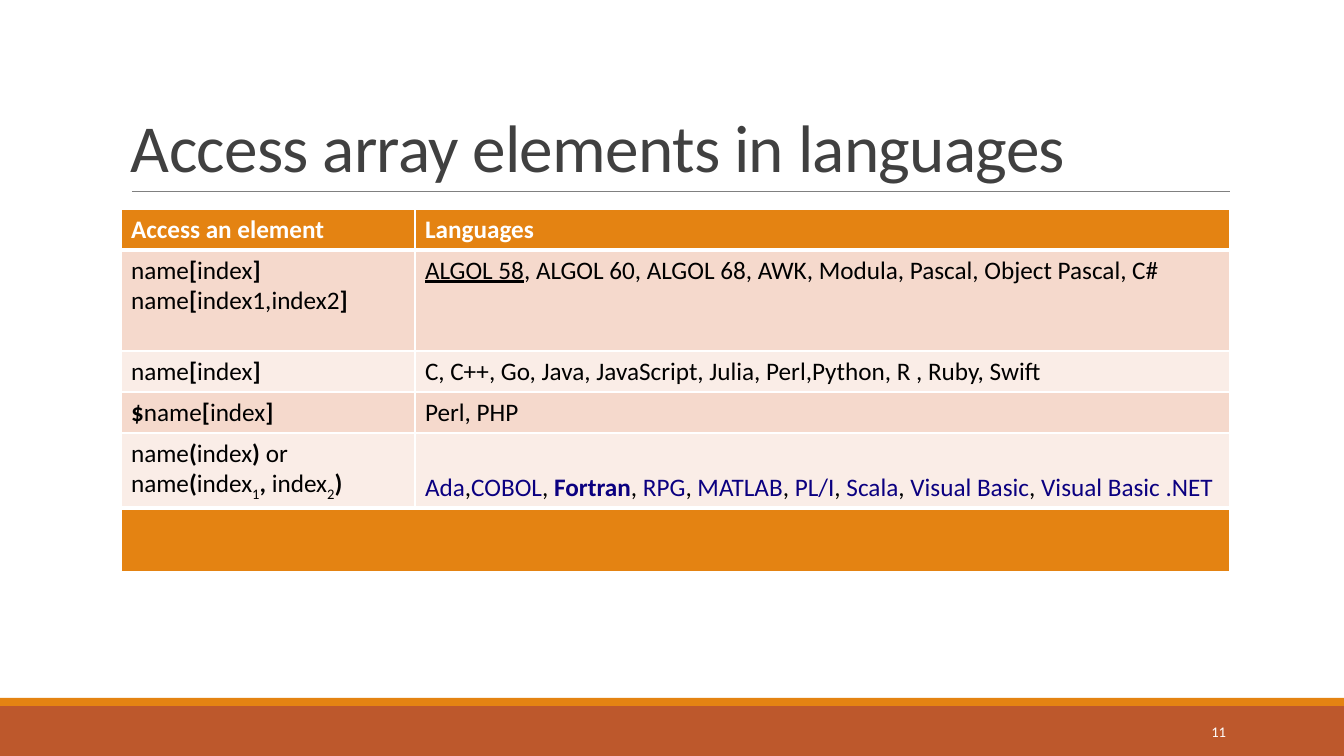
from lxml.etree import SubElement
from pptx import Presentation
from pptx.dml.color import RGBColor
from pptx.enum.shapes import MSO_CONNECTOR, MSO_SHAPE
from pptx.enum.text import MSO_ANCHOR, PP_ALIGN
from pptx.oxml import parse_xml
from pptx.oxml.ns import nsdecls, qn
from pptx.util import Pt

PX = 12192000 / 1344
FONT = "Calibri"
COLORS = {
    "orange": "E48312", "rust": "BD582C", "rule": "808080", "title": "404040",
    "white": "FFFFFF", "black": "000000", "link": "0B0080",
    "dark_band": "F5D9CC", "light_band": "FAEDE7",
}


def px(*lengths):
    return [round(length * PX) for length in lengths]


def add_span(para, text, size, color, bold=False):
    span = para.add_run()
    span.text = text
    span.font.name = FONT
    span.font.size = Pt(size)
    span.font.bold = bold
    span.font.color.rgb = RGBColor.from_string(COLORS[color])
    return span


deck = Presentation()
deck.slide_width, deck.slide_height = px(1344, 756)
page = deck.slides.add_slide(deck.slide_layouts[6])

for top, height, color in [(706, 50, "rust"), (698, 8, "orange")]:
    bar = page.shapes.add_shape(MSO_SHAPE.RECTANGLE, *px(0, top, 1344, height))
    bar.shadow.inherit = False
    bar.fill.solid()
    bar.fill.fore_color.rgb = RGBColor.from_string(COLORS[color])
    bar.line.fill.background()

rule = page.shapes.add_connector(MSO_CONNECTOR.STRAIGHT, *px(132, 191, 1230, 191))
rule.line.color.rgb = RGBColor.from_string(COLORS["rule"])
rule.line.width = Pt(0.5)
SubElement(rule._element.spPr, qn("a:effectLst"))

labels = [
    ("Access array elements in languages", (121, 31, 1109, 160), 48, "title",
     MSO_ANCHOR.BOTTOM, PP_ALIGN.LEFT, 0.85, -50),
    ("11", (1092, 712, 144, 40), 10.5, "white",
     MSO_ANCHOR.MIDDLE, PP_ALIGN.RIGHT, 1, 0),
]
for text, place, size, color, anchor, align, line_spacing, tracking in labels:
    box = page.shapes.add_textbox(*px(*place))
    box.text_frame.word_wrap = True
    box.text_frame.vertical_anchor = anchor
    para = box.text_frame.paragraphs[0]
    para.alignment = align
    para.line_spacing = line_spacing
    span = add_span(para, text, size, color)
    span.font._element.set("spc", str(tracking))

linked_languages = [("Ada", "link"), (",", ""), ("COBOL", "link")]
for language in ["Fortran", "RPG", "MATLAB", "PL/I", "Scala",
                 "Visual Basic", "Visual Basic .NET"]:
    style = "link bold" if language == "Fortran" else "link"
    linked_languages += [(", ", ""), (language, style)]

index_access = [("name", ""), ("[", "bold"), ("index", ""), ("]", "bold")]
rows = [
    (41, "orange", [("Access an element", "header bold")], [("Languages", "header bold")]),
    (101, "dark_band",
     index_access + [(" ", ""), ("name", ""), ("[", "bold"), ("index1,index2", ""), ("]", "bold")],
     [("ALGOL 58", "underline"),
      (", ALGOL 60, ALGOL 68, AWK, Modula, Pascal, Object Pascal, C#", "")]),
    (41, "light_band", index_access,
     [("C, C++, Go, Java, JavaScript, Julia, Perl,Python, R , Ruby, Swift", "")]),
    (41, "dark_band", [("$", "bold")] + index_access, [("Perl, PHP", "")]),
    (75, "light_band",
     [("name", ""), ("(", "bold"), ("index", ""), (")", "bold"), (" or name", ""),
      ("(", "bold"), ("index", ""), ("1", "subscript"), (",", "bold"), (" index", ""),
      ("2", "subscript"), (")", "bold")],
     linked_languages),
    (64, "orange", [], []),
]

table_height = sum(row[0] for row in rows)
table = page.shapes.add_table(len(rows), 2, *px(121, 209, 1109, table_height)).table
table.first_row = table.horz_banding = False
for column, width in zip(table.columns, px(294, 815)):
    column.width = width

last = len(rows) - 1
for row_index, (height, band, *contents) in enumerate(rows):
    table.rows[row_index].height = px(height)[0]
    line_widths = {
        "L": 1, "R": 1,
        "T": 3 if row_index in (1, last) else 1,
        "B": 3 if row_index in (0, last - 1) else 1,
    }
    for column_index, spans in enumerate(contents):
        cell = table.cell(row_index, column_index)
        cell.fill.solid()
        cell.fill.fore_color.rgb = RGBColor.from_string(COLORS[band])
        properties = cell._tc.get_or_add_tcPr()
        for position, (side, width) in enumerate(line_widths.items()):
            properties.insert(position, parse_xml(
                f'<a:ln{side} {nsdecls("a")} w="{Pt(width)}"><a:solidFill>'
                f'<a:srgbClr val="{COLORS["white"]}"/></a:solidFill></a:ln{side}>'))
        para = cell.text_frame.paragraphs[0]
        for text, style in spans:
            color = "white" if "header" in style else "link" if "link" in style else "black"
            span = add_span(para, text, 18, color, "bold" in style)
            if "underline" in style:
                span.font.underline = True
            if "subscript" in style:
                span.font._element.set("baseline", "-25000")

table.cell(last - 1, 1).vertical_anchor = MSO_ANCHOR.BOTTOM
table.cell(last, 0).merge(table.cell(last, 1))

deck.save("out.pptx")
